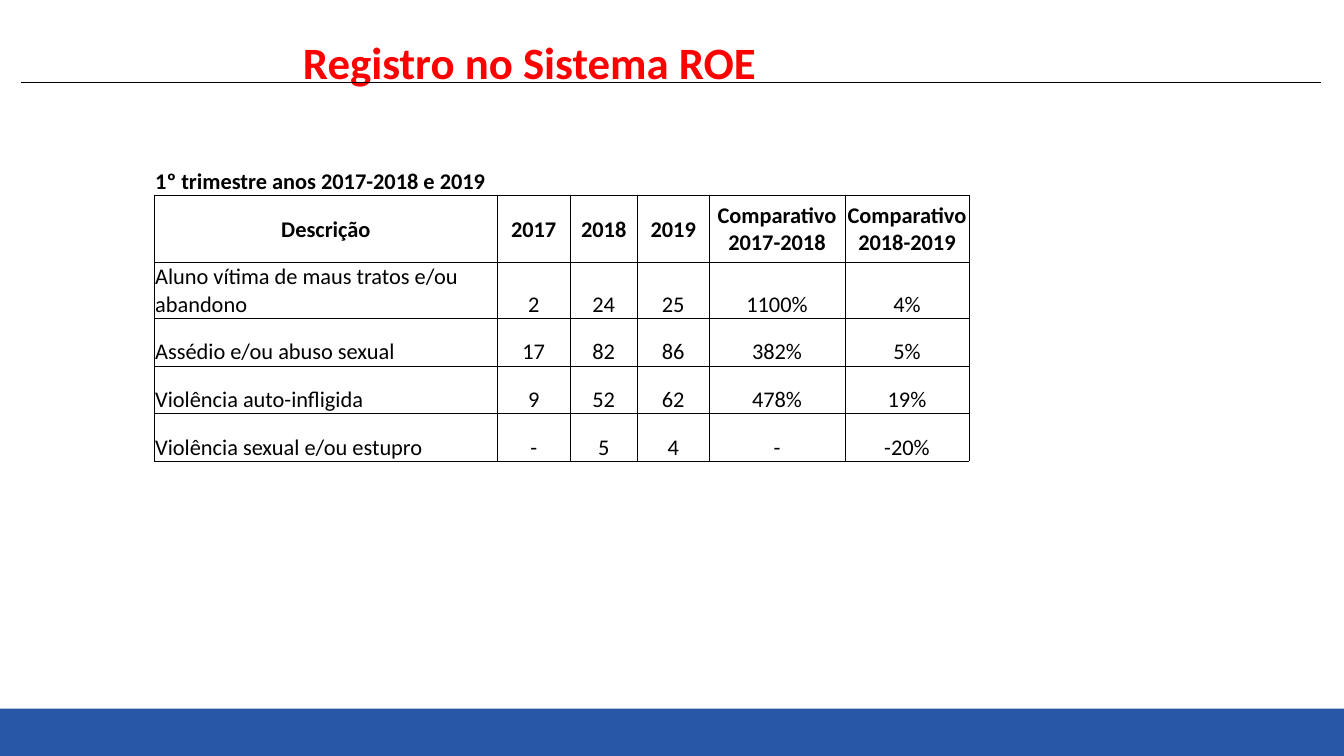
import pptx
import pptx.dml.color
import pptx.enum.shapes
import pptx.enum.text
import pptx.oxml
import pptx.oxml.ns
import pptx.util
from pptx.util import Cm

FONT = "Calibri"
COL_WIDTHS = [8.64, 1.83, 1.7, 1.8, 3.43, 3.12]
ROW_HEIGHTS = [1.19, 1.7, 1.37, 1.2, 1.2, 1.2]
CAPTION = "1º trimestre anos 2017-2018 e 2019"
ROWS = [
    [CAPTION, "", "", "", "", ""],
    ["Descrição", "2017", "2018", "2019", "Comparativo 2017-2018", "Comparativo 2018-2019"],
    ["Aluno vítima de maus tratos e/ou abandono", "2", "24", "25", "1100%", "4%"],
    ["Assédio e/ou abuso sexual", "17", "82", "86", "382%", "5%"],
    ["Violência auto-infligida", "9", "52", "62", "478%", "19%"],
    ["Violência sexual e/ou estupro", "-", "5", "4", "-", "-20%"],
]


def rgb(color):
    return pptx.dml.color.RGBColor.from_string(color)


def add_run(p, text, size, color="000000", bold=False):
    r = p.add_run()
    r.text = text
    r.font.name = FONT
    r.font.size = pptx.util.Pt(size)
    r.font.bold = bold
    r.font.color.rgb = rgb(color)


def add_title(s, text):
    title = s.shapes.title
    title.left, title.top, title.width, title.height = Cm(2.92), Cm(0.74), Cm(20.85), Cm(1.63)
    tf = title.text_frame
    tf.word_wrap = True
    tf.auto_size = pptx.enum.text.MSO_AUTO_SIZE.NONE
    tf.vertical_anchor = pptx.enum.text.MSO_ANCHOR.TOP
    p = tf.paragraphs[0]
    p.alignment = pptx.enum.text.PP_ALIGN.CENTER
    add_run(p, text, 32, "FF0000", bold=True)


def add_footer_band(s, color):
    band = s.shapes.add_shape(pptx.enum.shapes.MSO_SHAPE.RECTANGLE,
                              0, Cm(17.86), Cm(33.86), Cm(1.19))
    band.shadow.inherit = False
    band.fill.solid()
    band.fill.fore_color.rgb = rgb(color)
    band.line.fill.background()


def add_rule(s):
    rule = s.shapes.add_connector(pptx.enum.shapes.MSO_CONNECTOR.STRAIGHT,
                                  Cm(0.53), Cm(2.08), Cm(33.27), Cm(2.08))
    rule.line.color.rgb = rgb("000000")
    rule.line.width = pptx.util.Pt(0.75)
    pptx.oxml.ns.qn("a:effectLst")
    rule._element.spPr.append(
        pptx.oxml.parse_xml(f'<a:effectLst {pptx.oxml.ns.nsdecls("a")}/>'))


def set_borders(cell, sides):
    """Draw thin black borders on the given sides, in the order L, R, T, B."""
    tcPr = cell._tc.get_or_add_tcPr()
    for i, side in enumerate(sides):
        tcPr.insert(i, pptx.oxml.parse_xml(
            f'<a:ln{side} {pptx.oxml.ns.nsdecls("a")} w="6350"><a:solidFill>'
            f'<a:srgbClr val="000000"/></a:solidFill></a:ln{side}>'))


def fill_cell(cell, text, row, col):
    anchor = pptx.enum.text.MSO_ANCHOR
    cell.margin_left = cell.margin_right = cell.margin_top = Cm(0.02)
    cell.margin_bottom = 0
    cell.vertical_anchor = anchor.MIDDLE if row == 1 else anchor.BOTTOM
    cell.fill.background()
    set_borders(cell, "B" if row == 0 else "LRTB")
    if text:
        p = cell.text_frame.paragraphs[0]
        if col > 0 or row == 1:
            p.alignment = pptx.enum.text.PP_ALIGN.CENTER
        add_run(p, text, 16, bold=row < 2)


def add_records_table(s):
    table = s.shapes.add_table(len(ROWS), len(COL_WIDTHS), Cm(3.89), Cm(3.73),
                               Cm(sum(COL_WIDTHS)), Cm(sum(ROW_HEIGHTS))).table
    table.first_row = False
    table.horz_banding = False
    for column, width in zip(table.columns, COL_WIDTHS):
        column.width = Cm(width)
    for i, (height, texts) in enumerate(zip(ROW_HEIGHTS, ROWS)):
        table.rows[i].height = Cm(height)
        for j, text in enumerate(texts):
            fill_cell(table.cell(i, j), text, i, j)


def main():
    prs = pptx.Presentation()
    prs.slide_width, prs.slide_height = Cm(33.86), Cm(19.05)
    s = prs.slides.add_slide(prs.slide_layouts[5])
    add_footer_band(s, "2857A5")
    add_rule(s)
    add_title(s, "Registro no Sistema ROE")
    add_records_table(s)
    prs.save("out.pptx")


if __name__ == "__main__":
    main()
